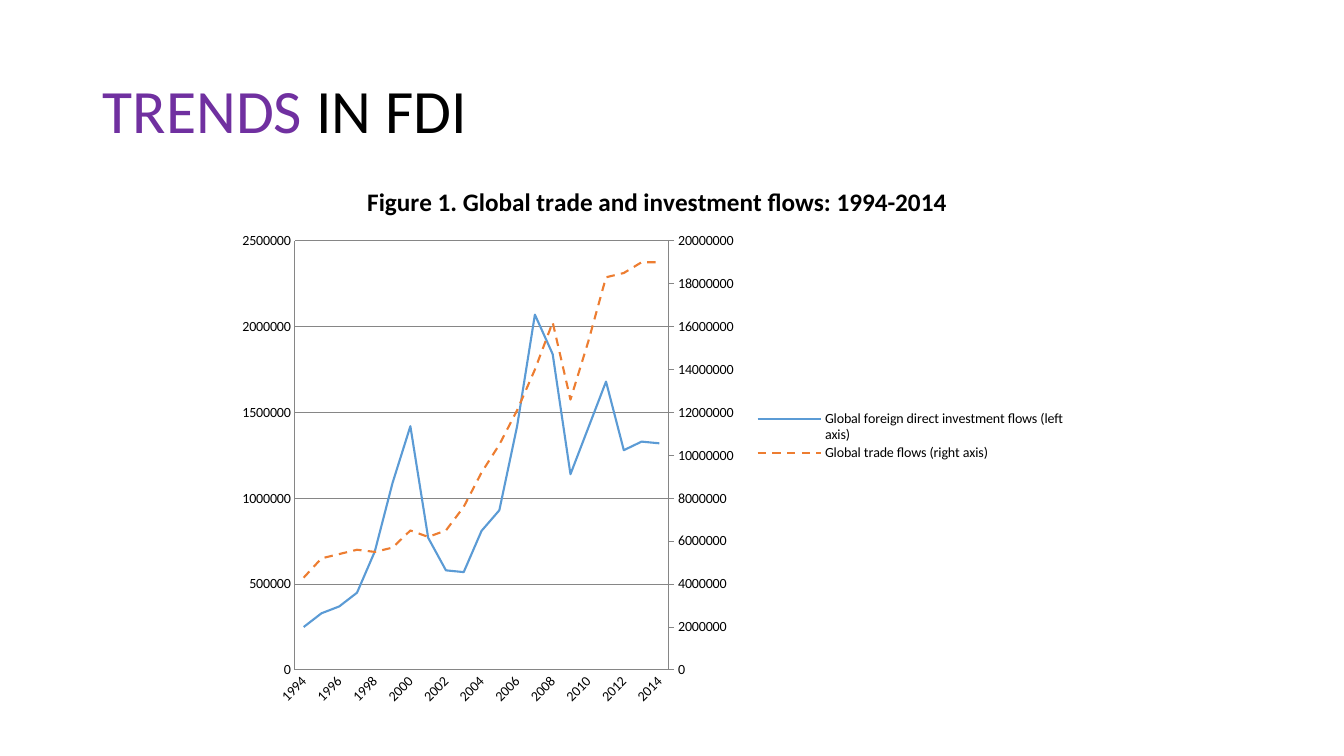
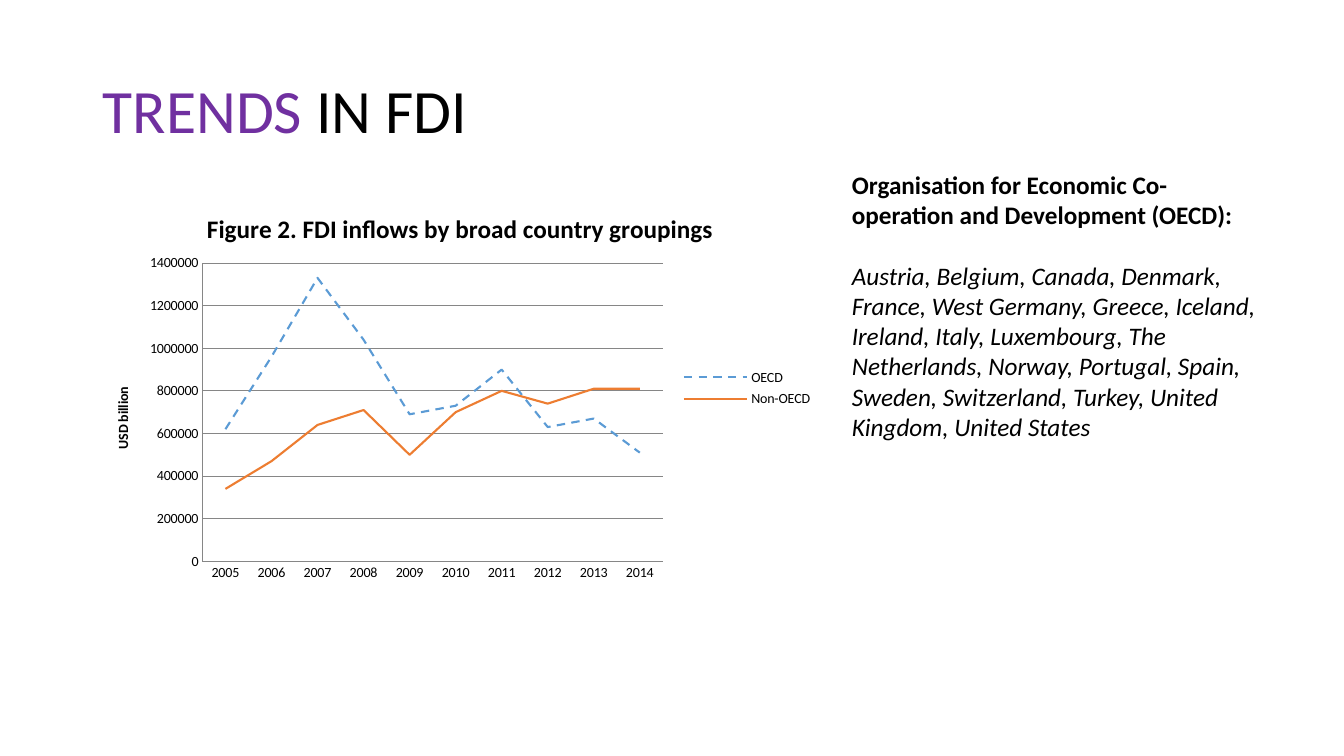
from copy import deepcopy
from lxml.etree import SubElement
from pptx import Presentation
from pptx.chart.data import CategoryChartData
from pptx.dml.color import RGBColor
from pptx.enum.chart import XL_CHART_TYPE, XL_LEGEND_POSITION, XL_TICK_MARK
from pptx.enum.dml import MSO_LINE
from pptx.enum.text import MSO_ANCHOR, PP_ALIGN
from pptx.oxml.ns import qn
from pptx.util import Inches, Pt

COLORS = {"purple": "7030A0", "black": "000000", "grid": "868686",
          "blue": "5B9BD5", "orange": "ED7D31"}
FONT = "Calibri"


def style_font(font, size, color="black", **format_values):
    for key, value in {"name": FONT, "size": Pt(size), **format_values}.items():
        setattr(font, key, value)
    font.color.rgb = RGBColor.from_string(COLORS[color])


def set_layout(parent, index, fractions, inner=False):
    for old in parent.findall(qn("c:layout")):
        parent.remove(old)
    layout = parent.makeelement(qn("c:layout"))
    parent.insert(index, layout)
    manual = SubElement(layout, qn("c:manualLayout"))
    if inner:
        SubElement(manual, qn("c:layoutTarget")).set("val", "inner")
    for key in ("xMode", "yMode"):
        SubElement(manual, qn(f"c:{key}")).set("val", "edge")
    for key, value in zip("xywh", fractions):
        SubElement(manual, qn(f"c:{key}")).set("val", str(value))


FIGURES = [
    {
        "title": "Figure 1. Global trade and investment flows: 1994-2014",
        "box": (2.25, 1.56, 8.42, 5.53),
        "years": range(1994, 2015),
        "maximum": 2500000, "step": 500000,
        "title_at": (0.16, 0.04),
        "plot_at": (0.08, 0.15, 0.44, 0.77),
        "legend_at": (0.62, 0.45, 0.37, 0.1),
        "series": [
            ("Global foreign direct investment flows (left axis)", "blue", MSO_LINE.SOLID,
             [250000, 330000, 370000, 450000, 690000, 1090000, 1420000, 770000, 580000,
              570000, 810000, 930000, 1420000, 2070000, 1840000, 1140000, 1410000,
              1680000, 1280000, 1330000, 1320000]),
            ("Global trade flows (right axis)", "orange", MSO_LINE.DASH,
             [4300000, 5200000, 5400000, 5600000, 5500000, 5700000, 6500000, 6200000,
              6500000, 7600000, 9200000, 10500000, 12100000, 14000000, 16200000,
              12600000, 15300000, 18300000, 18500000, 19000000, 19000000]),
        ],
    },
    {
        "title": "Figure 2. FDI inflows by broad country groupings",
        "box": (0.92, 1.85, 7.25, 4),
        "years": range(2005, 2015),
        "maximum": 1400000, "step": 200000,
        "title_at": (0.15, 0.05),
        "plot_at": (0.15, 0.19, 0.63, 0.74),
        "legend_at": (0.8, 0.44, 0.19, 0.12),
        "series": [
            ("OECD", "blue", MSO_LINE.DASH,
             [620000, 960000, 1330000, 1040000, 690000, 730000, 900000, 630000, 670000,
              510000]),
            ("Non-OECD", "orange", MSO_LINE.SOLID,
             [340000, 470000, 640000, 710000, 500000, 700000, 800000, 740000, 810000,
              810000]),
        ],
    },
]

prs = Presentation()
prs.slide_width, prs.slide_height = Inches(13.33), Inches(7.5)
slides, charts = [], []

for figure in FIGURES:
    slide = prs.slides.add_slide(prs.slide_layouts[5])
    slides.append(slide)
    heading = slide.shapes.title
    heading.left, heading.top, heading.width, heading.height = map(
        Inches, (0.92, 0.4, 11.5, 1.45))
    heading.text_frame.vertical_anchor = MSO_ANCHOR.MIDDLE
    heading_line = heading.text_frame.paragraphs[0]
    heading_line.alignment = PP_ALIGN.LEFT
    heading_line.line_spacing = 0.9
    for words, color in (("TRENDS ", "purple"), ("IN FDI", "black")):
        run = heading_line.add_run()
        run.text = words
        style_font(run.font, 44, color)

    flows = CategoryChartData(number_format="0")
    flows.categories = [str(year) for year in figure["years"]]
    for name, color, dash, values in figure["series"]:
        flows.add_series(name, values)
    chart = slide.shapes.add_chart(
        XL_CHART_TYPE.LINE, *map(Inches, figure["box"]), flows).chart
    charts.append(chart)
    style_font(chart.font, 10)

    chart.has_title = True
    caption = chart.chart_title.text_frame
    caption.text = figure["title"]
    style_font(caption.paragraphs[0].runs[0].font, 18, bold=True)
    chart.has_legend = True
    chart.legend.position = XL_LEGEND_POSITION.RIGHT
    chart.legend.include_in_layout = False

    plot = chart.plots[0]
    plot.vary_by_categories = False
    for line, (name, color, dash, values) in zip(plot.series, figure["series"]):
        line.smooth = False
        line.format.line.width = Pt(1.5)
        line.format.line.color.rgb = RGBColor.from_string(COLORS[color])
        line.format.line.dash_style = dash

    amounts = chart.value_axis
    amounts.minimum_scale = 0
    amounts.maximum_scale = figure["maximum"]
    amounts.major_unit = figure["step"]
    amounts.has_major_gridlines = True
    amounts.tick_labels.number_format = "0"
    amounts.tick_labels.number_format_is_linked = False
    for axis in (chart.category_axis, amounts):
        axis.major_tick_mark = XL_TICK_MARK.NONE
        axis.minor_tick_mark = XL_TICK_MARK.NONE
    for stroke in (chart.category_axis.format.line, amounts.format.line,
                   amounts.major_gridlines.format.line):
        stroke.width = Pt(0.75)
        stroke.color.rgb = RGBColor.from_string(COLORS["grid"])

    chart_xml = chart.element if hasattr(chart, "element") else chart._chartSpace
    set_layout(chart_xml.find(".//" + qn("c:plotArea")), 0, figure["plot_at"], inner=True)
    set_layout(chart_xml.find(qn("c:chart")).find(qn("c:title")), 1, figure["title_at"])
    set_layout(chart_xml.find(".//" + qn("c:legend")), 1, figure["legend_at"])

years = charts[0].category_axis
style_font(years.tick_labels.font, 10)
years_xml = years._element
years_xml.find(qn("c:txPr")).find(qn("a:bodyPr")).set("rot", "-2700000")
label_skip = years_xml.makeelement(qn("c:tickLblSkip"), {"val": "2"})
years_xml.find(qn("c:noMultiLvlLbl")).addprevious(label_skip)

plot_area = years_xml.getparent()
left_lines = plot_area.find(qn("c:lineChart"))
left_amounts = plot_area.find(qn("c:valAx"))
right_lines, right_years, right_amounts = map(
    deepcopy, (left_lines, years_xml, left_amounts))
left_lines.remove(left_lines.findall(qn("c:ser"))[1])
right_lines.remove(right_lines.find(qn("c:ser")))
left_lines.addnext(right_lines)
left_amounts.addnext(right_years)
right_years.addnext(right_amounts)

for axis_id, value in zip(right_lines.findall(qn("c:axId")), ("5001", "5002")):
    axis_id.set("val", value)
right_amounts.remove(right_amounts.find(qn("c:majorGridlines")))
for axis_xml, settings in (
    (right_years, {"axId": "5001", "crossAx": "5002", "delete": "1"}),
    (right_amounts, {"axId": "5002", "crossAx": "5001", "axPos": "r", "crosses": "max",
                     "majorTickMark": "out", "max": "20000000",
                     "majorUnit": "2000000"}),
):
    for key, value in settings.items():
        axis_xml.find(".//" + qn(f"c:{key}")).set("val", value)

unit = charts[1].value_axis.axis_title.text_frame
unit.text = "USD billion"
style_font(unit.paragraphs[0].runs[0].font, 10, bold=True)
unit_body = unit._txBody.find(qn("a:bodyPr"))
unit_body.set("rot", "-5400000")
unit_body.set("vert", "horz")

members = slides[1].shapes.add_textbox(*map(Inches, (8.35, 1.63, 4.21, 3.43))).text_frame
members.word_wrap = True
group_name = members.paragraphs[0]
group_name.space_after = Pt(21.6)
countries = members.add_paragraph()
for paragraph, words, emphasis in (
    (group_name, "Organisation for Economic Co-operation and Development (OECD):",
     {"bold": True}),
    (countries, "Austria, Belgium, Canada, Denmark, France, West Germany, Greece, Iceland, "
     "Ireland, Italy, Luxembourg, The Netherlands, Norway, Portugal, Spain, Sweden, "
     "Switzerland, Turkey, United Kingdom, United States", {"italic": True}),
):
    run = paragraph.add_run()
    run.text = words
    style_font(run.font, 18, **emphasis)

prs.save("out.pptx")
